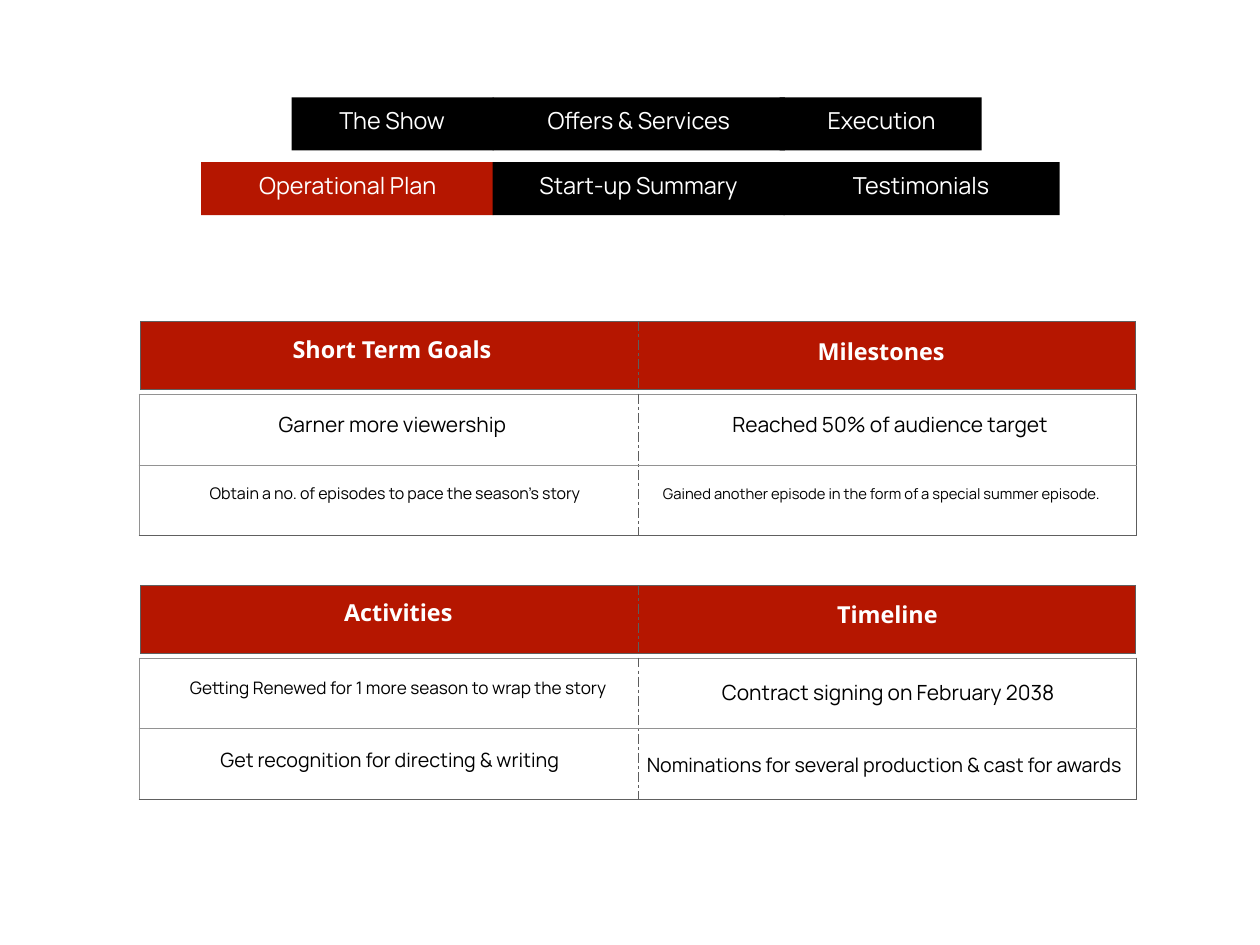
from lxml import etree
from pptx import Presentation
from pptx.dml.color import RGBColor
from pptx.enum.shapes import MSO_SHAPE
from pptx.enum.text import MSO_ANCHOR, PP_ALIGN
from pptx.oxml.ns import qn
from pptx.util import Inches, Pt

RECTANGLE = MSO_SHAPE.RECTANGLE
MIDDLE = MSO_ANCHOR.MIDDLE
CENTER = PP_ALIGN.CENTER

COLORS = {
    "black": "000000",
    "white": "FFFFFF",
    "red": "B51600",
    "light_gray": "929292",
    "gray": "606060",
    "dark_gray": "5D5D5D",
}

TAB_FORMAT = {"name": "Manrope", "size": Pt(19), "bold": False}
HEADING_FORMAT = {"name": "Open Sans", "size": Pt(19), "bold": True}
BODY_FORMAT = {"name": "Manrope", "bold": False}
FRAME_FORMAT = {
    "word_wrap": True,
    "vertical_anchor": MIDDLE,
    "margin_left": Inches(0.03),
    "margin_right": Inches(0.03),
    "margin_top": Inches(0.03),
    "margin_bottom": Inches(0.03),
}
PLAIN_TABLE = {"first_row": False, "horz_banding": False}

TAB_HEIGHT = 0.6
TAB_LABEL_HEIGHT = 0.59
TAB_LABEL_RISE = 0.04
TAB_ROWS = [
    (1.1, [
        ("The Show", 3.29, 2.28, 3.62, 1.61, "black"),
        ("Execution", 8.8, 2.28, 9.09, 1.72, "black"),
        ("Offers & Services", 5.56, 3.3, 5.79, 2.84, "black"),
    ]),
    (1.83, [
        ("Testimonials", 8.84, 3.12, 9.07, 2.65, "black"),
        ("Operational Plan", 2.27, 3.3, 2.6, 2.65, "red"),
        ("Start-up Summary", 5.56, 3.3, 5.88, 2.65, "black"),
    ]),
]

BODY_DROP = 0.82
SECTIONS = [
    (3.63, [
        ("Short Term Goals", 3.01, 3.71, 2.83, 0.47),
        ("Milestones", 8.53, 3.73, 2.83, 0.47),
    ], [
        ("Garner more viewership", 2.78, 4.56, 3.3, 0.47, 17),
        ("Reached 50% of audience target", 7.3, 4.56, 5.49, 0.47, 17),
        ("Obtain a no. of episodes to pace the season’s story", 1.89, 5.3, 5.13, 0.53, 13),
        ("Gained another episode in the form of a special summer episode.",
         6.92, 5.11, 6.06, 0.92, 12),
    ]),
    (6.61, [
        ("Activities", 3.08, 6.68, 2.83, 0.47),
        ("Timeline", 8.6, 6.7, 2.83, 0.47),
    ], [
        ("Getting Renewed for 1 more season to wrap the story", 1.89, 7.53, 5.21, 0.47, 14),
        ("Contract signing on February 2038", 7.34, 7.58, 5.37, 0.47, 17),
        ("Get recognition for directing & writing", 1.71, 8.34, 5.38, 0.47, 16),
        ("Nominations for several production & cast for awards", 7.02, 8.44, 5.92, 0.39, 16),
    ]),
]


def rgb(color):
    return RGBColor.from_string(COLORS[color])


def apply_format(target, values):
    for name, value in values.items():
        setattr(target, name, value)


def add_label(slide, text, left, top, width, height, color, font_format):
    box = slide.shapes.add_textbox(Inches(left), Inches(top), Inches(width), Inches(height))
    apply_format(box.text_frame, FRAME_FORMAT)
    paragraph = box.text_frame.paragraphs[0]
    paragraph.text = text
    paragraph.alignment = CENTER
    apply_format(paragraph.font, font_format)
    paragraph.font.color.rgb = rgb(color)


def add_tab(slide, left, top, width, color):
    shape = slide.shapes.add_shape(
        RECTANGLE, Inches(left), Inches(top), Inches(width), Inches(TAB_HEIGHT))
    shape.shadow.inherit = False
    shape.fill.solid()
    shape.fill.fore_color.rgb = rgb(color)
    shape.line.fill.background()


def set_borders(cell, borders):
    properties = cell._tc.get_or_add_tcPr()
    for index, (side, color, dash) in enumerate(borders):
        line = etree.Element(qn(f"a:ln{side}"), w=str(Pt(0.75)))
        fill = etree.SubElement(line, qn("a:solidFill"))
        etree.SubElement(fill, qn("a:srgbClr"), val=COLORS[color])
        etree.SubElement(line, qn("a:prstDash"), val=dash)
        properties.insert(index, line)


def add_grid(slide, left, top, column_width, row_height, row_count, fill, left_color, rule_color):
    table = slide.shapes.add_table(
        row_count, 2, Inches(left), Inches(top),
        Inches(2 * column_width), Inches(row_count * row_height)).table
    apply_format(table, PLAIN_TABLE)
    for column in table.columns:
        column.width = Inches(column_width)
    for row_index, row in enumerate(table.rows):
        row.height = Inches(row_height)
        bottom_color = "gray" if row_index == row_count - 1 else rule_color
        for column_index, cell in enumerate(row.cells):
            cell.fill.solid()
            cell.fill.fore_color.rgb = rgb(fill)
            first = column_index == 0
            set_borders(cell, [
                ("L", left_color if first else "dark_gray", "solid" if first else "dashDot"),
                ("R", "dark_gray", "dashDot" if first else "solid"),
                ("T", rule_color, "solid"),
                ("B", bottom_color, "solid"),
            ])


def add_section(slide, top, headings, entries):
    add_grid(slide, 1.57, top + BODY_DROP, 5.63, 0.8, 2, "white", "light_gray", "light_gray")
    add_grid(slide, 1.59, top, 5.61, 0.77, 1, "red", "dark_gray", "gray")
    for heading in headings:
        add_label(slide, *heading, "white", HEADING_FORMAT)
    for *entry, size in entries:
        add_label(slide, *entry, "black", {**BODY_FORMAT, "size": Pt(size)})


def add_tab_row(slide, top, tabs):
    for text, left, width, label_left, label_width, color in tabs:
        add_tab(slide, left, top, width, color)
        add_label(slide, text, label_left, top - TAB_LABEL_RISE, label_width,
                  TAB_LABEL_HEIGHT, "white", TAB_FORMAT)


def main():
    presentation = Presentation()
    presentation.slide_width = Inches(14.22)
    presentation.slide_height = Inches(10.67)
    slide = presentation.slides.add_slide(presentation.slide_layouts[6])
    for top, tabs in TAB_ROWS:
        add_tab_row(slide, top, tabs)
    for top, headings, entries in SECTIONS:
        add_section(slide, top, headings, entries)
    presentation.save("out.pptx")


if __name__ == "__main__":
    main()
